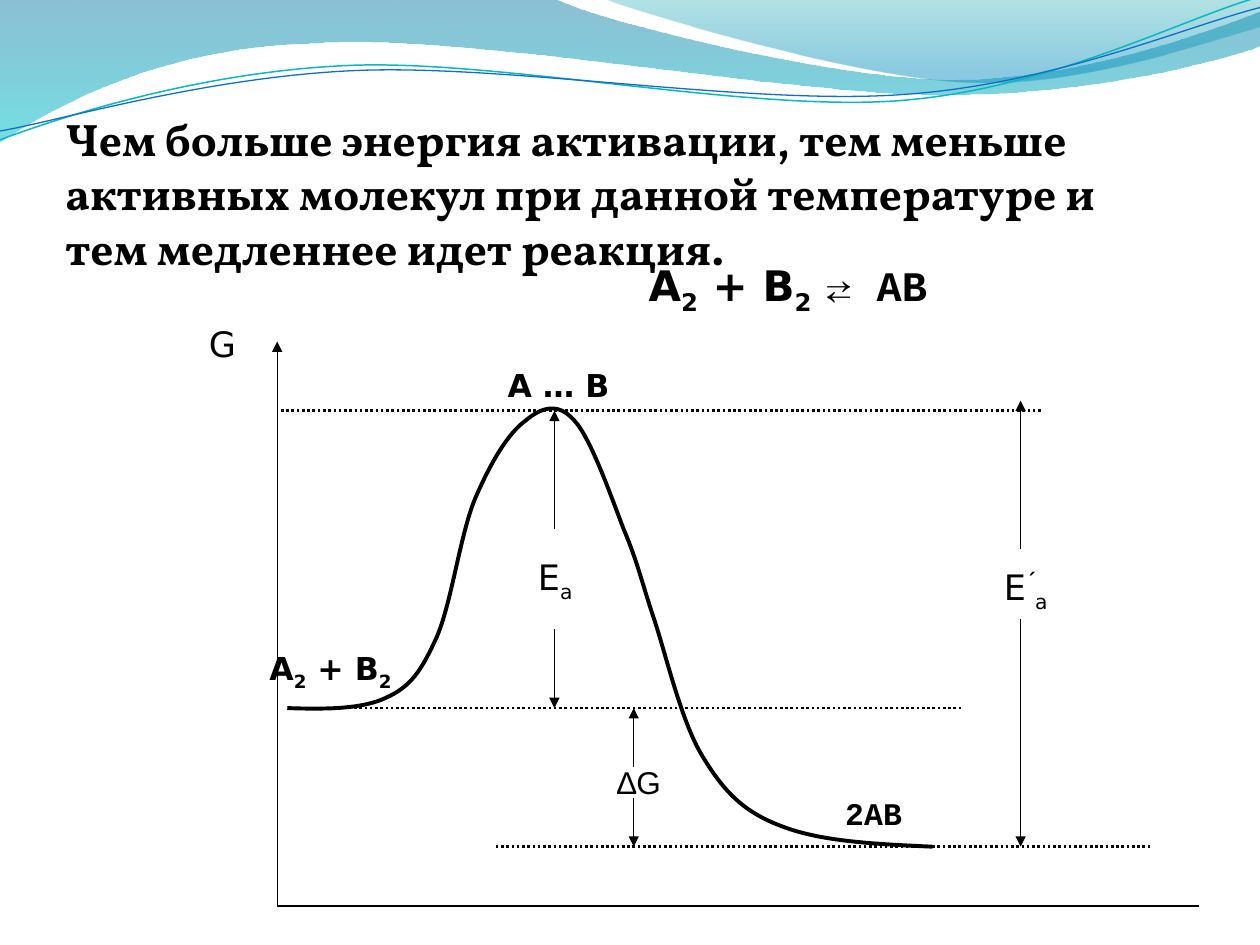
"""Build a slide on activation energy with a reaction energy diagram."""
import pptx
import pptx.dml.color
import pptx.enum.dml
import pptx.enum.shapes
import pptx.util
from lxml import etree
from pptx.oxml.ns import qn

COLORS = {"ink": "000000", "teal_line": "0AB8BF", "blue_line": "0F6FC6",
          "deep": "0074A1", "aqua": "00C6CF", "green": "00A1A9", "sky": "008BBF"}
COLUMNS, ROWS = 1000, 750
PEAK, REACTANTS, PRODUCTS = 326, 562, 672
AXIS_X, AXIS_Y, FORWARD_X, DELTA_X, REVERSE_X = 220, 719, 440, 503, 810

WAVES = [
    ((0, 0),
     [[(440, -1)],
      [(476, 17), (664, 63), (758, 63)], [(853, 63), (958, 26), (1000, 9)],
      [(1001, 36)],
      [(983, 44), (870, 76), (746, 75)], [(622, 75), (382, 28), (257, 34)],
      [(129, 36), (46, 83), (-1, 113)]],
     [(0, "deep", 45), (1, "aqua", 55)]),
    ((479, -1),
     [[(509, 11), (682, 62), (769, 65)], [(856, 69), (961, 32), (1000, 21)],
      [(1000, 0)]],
     [(0, "green", 30), (0.8, "sky", 45)]),
]
RIBBONS = [
    ([(0, 111), (48, 93), (158, 57), (277, 52), (395, 47), (593, 89), (713, 80),
      (833, 71), (938, 15), (998, -2)], "teal_line", 0.85),
    ([(0, 104), (47, 96), (164, 61), (283, 56), (403, 51), (597, 84), (717, 75),
      (836, 67), (941, 21), (1000, 6)], "blue_line", 0.75),
]
ENERGY_CURVE = [
    (228, REACTANTS), (257, 563), (287, 563), (306, 554), (326, 545), (334, 533),
    (346, 507), (358, 481), (365, 425), (377, 396), (389, 368), (403, 344),
    (417, 334), (430, 323), (443, 319), (456, 334), (469, 348), (485, 394),
    (495, 420), (506, 446), (509, 461), (519, 491), (529, 521), (541, 574),
    (558, 601), (575, 629), (591, 645), (621, 656), (652, 668), (696, 670),
    (740, PRODUCTS)]

LEVELS = [(826, AXIS_X, PEAK), (763, 243, REACTANTS), (913, 393, PRODUCTS)]
ARROWS = [
    (FORWARD_X, PEAK, 420), (FORWARD_X, REACTANTS, 499),
    (REVERSE_X, PRODUCTS, 491), (REVERSE_X, 318, 436),
    (DELTA_X, REACTANTS, 609), (DELTA_X, PRODUCTS, 633)]

SANS = {"name": "DejaVu Sans", "bold": False}
SANS_BOLD = {"name": "DejaVu Sans", "bold": True}
MONO_BOLD = {"name": "Courier New", "bold": True}
ARIAL = {"name": "Arial", "bold": False}
VOLLKORN = {"name": "Vollkorn", "bold": True}
REAGENTS = [("А", SANS_BOLD, 0), ("2", SANS_BOLD, -25),
            (" + В", SANS_BOLD, 0), ("2", SANS_BOLD, -25)]
STATEMENT = ("Чем больше энергия активации, тем меньше активных молекул "
             "при данной температуре и тем медленнее идет реакция.")
LABELS = [
    ((417, 436, 55, 43), 20, [("Е", SANS, 0), ("а", SANS, -25)]),
    ((156, 251, 55, 43), 20, [("G", SANS, 0)]),
    ((204, 510, 131, 40), 18, REAGENTS),
    ((393, 286, 110, 40), 18, [("А … В", SANS_BOLD, 0)]),
    ((661, 625, 102, 40), 18, [("2AB", MONO_BOLD, 0)]),
    ((787, 444, 87, 43), 20, [("Е", SANS, 0), ("΄", SANS_BOLD, 36), ("а", SANS, -25)]),
    ((480, 601, 71, 40), 18, [("∆G", ARIAL, 0)]),
    ((505, 201, 331, 50), 24, REAGENTS + [(" ", SANS_BOLD, 0), ("⇄ АВ", MONO_BOLD, 0)]),
]

deck = pptx.Presentation()
deck.slide_width, deck.slide_height = pptx.util.Inches(10), pptx.util.Inches(7.5)
slide = deck.slides.add_slide(deck.slide_layouts[6])


def place(x, y):
    return round(deck.slide_width * x / COLUMNS), round(deck.slide_height * y / ROWS)


def rgb(color):
    return pptx.dml.color.RGBColor.from_string(COLORS[color])


def apply(target, values):
    for attribute, value in values.items():
        setattr(target, attribute, value)


def add_outline(start, segments, close):
    builder = slide.shapes.build_freeform(*place(*start), scale=1.0)
    builder.add_line_segments([place(*point) for segment in segments for point in segment],
                              close=close)
    outline = builder.convert_to_shape()
    outline.shadow.inherit = False
    straights = iter(list(outline._element.iter(qn("a:lnTo"))))
    for segment in segments:
        steps = [next(straights) for _ in segment]
        if len(steps) == 3:
            bend = etree.Element(qn("a:cubicBezTo"))
            steps[0].addprevious(bend)
            for step in steps:
                bend.append(step[0])
                step.getparent().remove(step)
    return outline


def add_wave(start, segments, stops):
    wave = add_outline(start, segments, True)
    wave.line.fill.background()
    wave.fill.gradient()
    wave.fill.gradient_angle = 270
    for stop, (position, color, _) in zip(wave.fill.gradient_stops, stops):
        stop.position = position
        stop.color.rgb = rgb(color)
    for tint, (_, _, opacity) in zip(wave._element.spPr.iter(qn("a:srgbClr")), stops):
        etree.SubElement(tint, qn("a:alpha")).set("val", str(opacity * 1000))


def add_curve(points, color, width):
    bends = [points[i:i + 3] for i in range(1, len(points), 3)]
    curve = add_outline(points[0], bends, False)
    curve.fill.background()
    curve.line.color.rgb = rgb(color)
    curve.line.width = pptx.util.Pt(width)


def add_line(start, end, width=0.75, dash=None, arrow=False):
    line = slide.shapes.add_connector(pptx.enum.shapes.MSO_CONNECTOR.STRAIGHT,
                                      *place(*start), *place(*end))
    line.line.color.rgb = rgb("ink")
    apply(line.line, {"width": pptx.util.Pt(width), "dash_style": dash})
    if arrow:
        etree.SubElement(line.line._get_or_add_ln(), qn("a:headEnd")).set("type", "triangle")
    etree.SubElement(line._element.spPr, qn("a:effectLst"))


def add_text(box, size, runs):
    left, top, width, height = box
    text = slide.shapes.add_textbox(*place(left, top), *place(width, height))
    text.text_frame.word_wrap = True
    for wording, style, baseline in runs:
        run = text.text_frame.paragraphs[0].add_run()
        run.text = wording
        apply(run.font, {**style, "size": pptx.util.Pt(size)})
        run.font.color.rgb = rgb("ink")
        if baseline:
            run._r.get_or_add_rPr().set("baseline", str(baseline * 1000))


for wave in WAVES:
    add_wave(*wave)
for ribbon in RIBBONS:
    add_curve(*ribbon)
add_text((42, 83, 900, 138), 26, [(STATEMENT, VOLLKORN, 0)])
add_line((AXIS_X, 271), (AXIS_X, AXIS_Y), arrow=True)
add_line((AXIS_X, AXIS_Y), (952, AXIS_Y))
add_curve(ENERGY_CURVE, "ink", 2.25)
for right, left, level in LEVELS:
    add_line((right, level), (left, level), 1.5, pptx.enum.dml.MSO_LINE.ROUND_DOT)
for x, tip, tail in ARROWS:
    add_line((x, tip), (x, tail), arrow=True)
for label in LABELS:
    add_text(*label)

deck.save("out.pptx")
